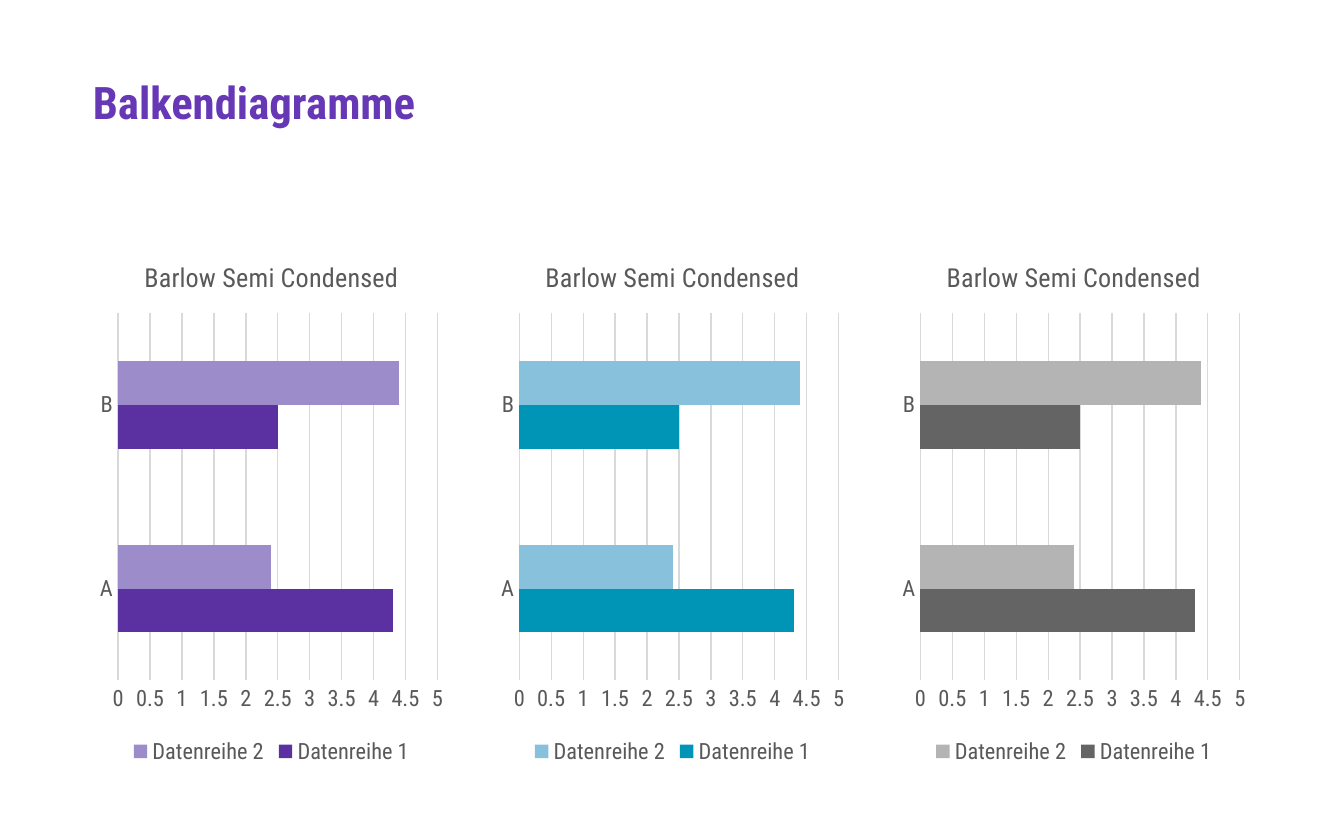
"""Build a slide with three clustered bar charts in different colour schemes."""
from pptx import Presentation
from pptx import util as u
from pptx.chart import data as chart_data
from pptx.dml import color
from pptx.enum import chart as charts, text

Inches = u.Inches
FONT = "Roboto Condensed"
COLOURS = {
    "title": "6638B6", "label": "595959", "grid": "D9D9D9",
    "violet": "5B31A2", "light violet": "9C8CCA",
    "blue": "0095B7", "light blue": "87C1DB",
    "grey": "646464", "light grey": "B4B4B4",
}
SERIES = {"Datenreihe 1": (4.3, 2.5), "Datenreihe 2": (2.4, 4.4)}
LABEL = {"name": FONT, "size": u.Pt(12), "bold": False}
LEFT, TOP, WIDTH, HEIGHT, STEP = 0.69, 1.76, 2.66, 3.97, 2.985


def rgb(name):
    return color.RGBColor.from_string(COLOURS[name])


def style_font(font, values, colour):
    for key, value in values.items():
        setattr(font, key, value)
    font.color.rgb = rgb(colour)


deck = Presentation()
deck.slide_width, deck.slide_height = Inches(10), Inches(6.25)
slide = deck.slides.add_slide(deck.slide_layouts[5])

title = slide.shapes.title
title.left, title.top = Inches(LEFT), Inches(0.62)
title.width, title.height = Inches(8.62), Inches(0.32)
frame = title.text_frame
frame_format = {
    "margin_left": 0, "margin_top": 0, "margin_right": 0, "margin_bottom": 0,
    "word_wrap": True, "auto_size": text.MSO_AUTO_SIZE.NONE,
    "vertical_anchor": text.MSO_ANCHOR.MIDDLE,
}
for key, value in frame_format.items():
    setattr(frame, key, value)
para = frame.paragraphs[0]
para.alignment = text.PP_ALIGN.LEFT
para.line_spacing = 0.9
span = para.add_run()
span.text = "Balkendiagramme"
style_font(span.font, {"name": FONT, "size": u.Pt(24), "bold": True}, "title")

for column, scheme in enumerate(("violet", "blue", "grey")):
    data = chart_data.CategoryChartData()
    data.categories = ["A", "B"]
    for name, values in SERIES.items():
        data.add_series(name, values)
    chart = slide.shapes.add_chart(
        charts.XL_CHART_TYPE.BAR_CLUSTERED, Inches(LEFT + column * STEP),
        Inches(TOP), Inches(WIDTH), Inches(HEIGHT), data).chart
    style_font(chart.font, LABEL, "label")

    chart.has_title = True
    heading = chart.chart_title.text_frame.paragraphs[0]
    span = heading.add_run()
    span.text = "Barlow Semi Condensed"
    style_font(span.font, {**LABEL, "size": u.Pt(14)}, "label")
    chart.chart_title.include_in_layout = False

    chart.has_legend = True
    chart.legend.position = charts.XL_LEGEND_POSITION.BOTTOM
    chart.legend.include_in_layout = False
    style_font(chart.legend.font, LABEL, "label")

    for axis in (chart.category_axis, chart.value_axis):
        axis.major_tick_mark = axis.minor_tick_mark = charts.XL_TICK_MARK.NONE
        style_font(axis.tick_labels.font, LABEL, "label")
    chart.value_axis.has_major_gridlines = True
    chart.value_axis.format.line.fill.background()
    for line in (chart.category_axis.format.line,
                 chart.value_axis.major_gridlines.format.line):
        line.color.rgb = rgb("grid")
        line.width = u.Pt(0.75)
    scale = {"minimum_scale": 0, "maximum_scale": 5, "major_unit": 0.5}
    for key, value in scale.items():
        setattr(chart.value_axis, key, value)

    plot = chart.plots[0]
    plot.gap_width = 219
    plot.overlap = 0
    plot.vary_by_categories = False
    for series, colour in zip(plot.series, (scheme, f"light {scheme}")):
        series.format.fill.solid()
        series.format.fill.fore_color.rgb = rgb(colour)

deck.save("out.pptx")
